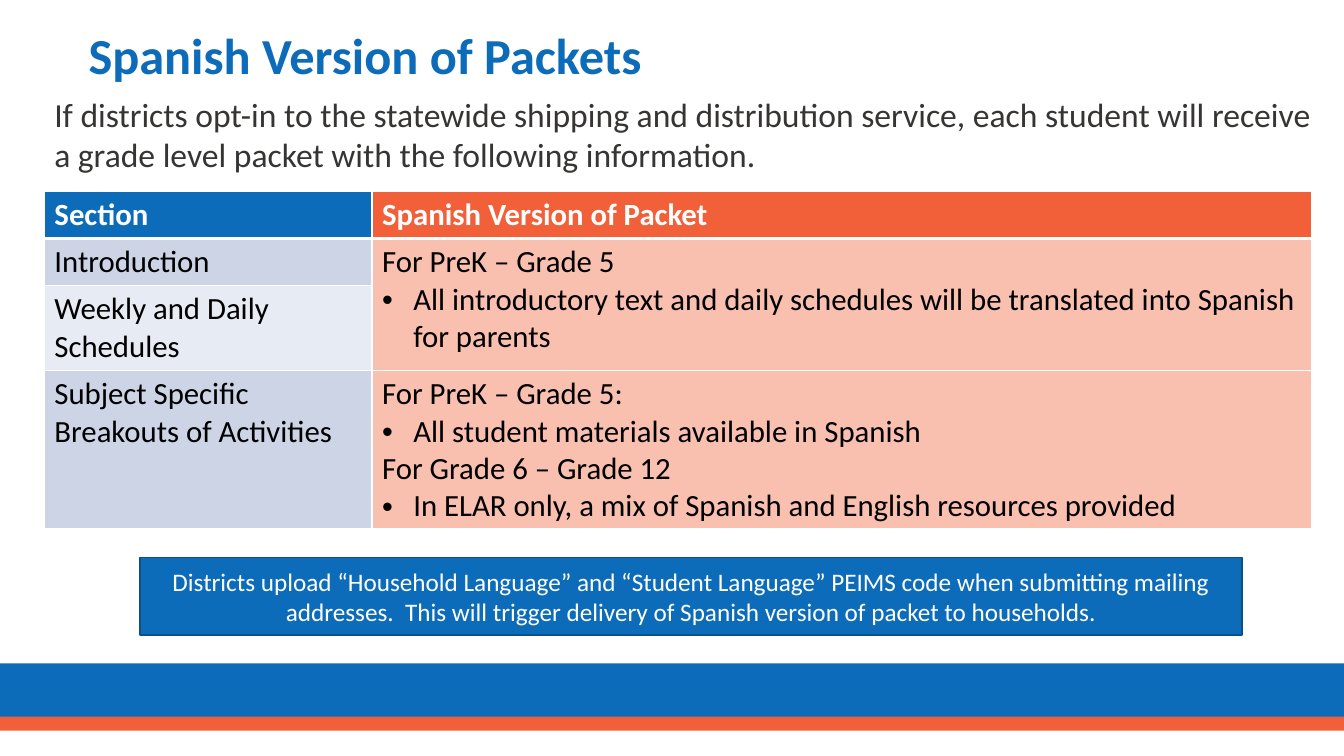
from lxml.etree import SubElement
from pptx import Presentation
from pptx.dml.color import RGBColor
from pptx.enum.shapes import MSO_SHAPE
from pptx.enum.text import MSO_ANCHOR, PP_ALIGN
from pptx.oxml import parse_xml
from pptx.oxml.ns import nsdecls, qn
from pptx.util import Inches, Pt

BLUE, ORANGE, WHITE, BLACK = "0D6CB9", "F16038", "FFFFFF", "000000"
PALE_BLUE, PALER_BLUE, PALE_ORANGE = "CCD4E6", "E7EBF3", "F9BFAF"


def color(value):
    return RGBColor.from_string(value)


def write(frame, lines, size, text_color, bold=False, align=None):
    """Fill a text frame; lines that start with a bullet sign become list items."""
    frame.word_wrap = True
    for index, line in enumerate(lines):
        para = frame.paragraphs[0] if index == 0 else frame.add_paragraph()
        para.text = line.removeprefix("• ")
        para.alignment = align
        if line.startswith("• "):
            properties = para._p.get_or_add_pPr()
            properties.set("marL", str(Inches(0.31)))
            properties.set("indent", str(-Inches(0.31)))
            SubElement(properties, qn("a:buFont")).set("typeface", "Arial")
            SubElement(properties, qn("a:buChar")).set("char", "•")
        para.font.name = "Calibri"
        para.font.size = Pt(size)
        para.font.bold = bold
        para.font.color.rgb = color(text_color)


deck = Presentation()
deck.slide_width, deck.slide_height = Inches(13.33), Inches(7.5)
page = deck.slides.add_slide(deck.slide_layouts[6])

# Footer bands and the note above them
rectangles = []
for left, top, width, height, fill in [
    (0, 6.58, 13.33, 0.58, BLUE),
    (0, 7.11, 13.33, 0.14, ORANGE),
    (1.39, 5.53, 10.93, 0.77, BLUE),
]:
    rectangle = page.shapes.add_shape(
        MSO_SHAPE.RECTANGLE, Inches(left), Inches(top), Inches(width), Inches(height))
    rectangle.shadow.inherit = False
    rectangle.fill.solid()
    rectangle.fill.fore_color.rgb = color(fill)
    rectangle.line.fill.background()
    rectangles.append(rectangle)

note = rectangles[-1]
note.line.color.rgb = color("0A5089")
note.line.width = Pt(1)
note.text_frame.vertical_anchor = MSO_ANCHOR.MIDDLE
write(note.text_frame, [
    "Districts upload “Household Language” and “Student Language” PEIMS code when "
    "submitting mailing addresses.  This will trigger delivery of Spanish version "
    "of packet to households."], 18, WHITE, align=PP_ALIGN.CENTER)

# Title
title = page.shapes.add_textbox(Inches(0.78), Inches(0.17), Inches(12.16), Inches(0.82))
title.text_frame.vertical_anchor = MSO_ANCHOR.MIDDLE
write(title.text_frame, ["Spanish Version of Packets"], 36, BLUE, bold=True)
title.text_frame.paragraphs[0].line_spacing = 0.9

# Introduction
intro = page.shapes.add_textbox(Inches(0.44), Inches(0.88), Inches(12.76), Inches(0.91))
write(intro.text_frame, [
    "If districts opt-in to the statewide shipping and distribution service, each "
    "student will receive a grade level packet with the following information."],
    24, "363534")

# Table of packet sections
rows = [
    (0.46, (["Section"], BLUE), (["Spanish Version of Packet"], ORANGE)),
    (0.46, (["Introduction"], PALE_BLUE), ([
        "For PreK – Grade 5",
        "• All introductory text and daily schedules will be translated into Spanish "
        "for parents"], PALE_ORANGE)),
    (0.84, (["Weekly and Daily Schedules"], PALER_BLUE), ([], PALE_ORANGE)),
    (1.57, (["Subject Specific Breakouts of Activities"], PALE_BLUE), ([
        "For PreK – Grade 5:",
        "• All student materials available in Spanish",
        "For Grade 6 – Grade 12",
        "• In ELAR only, a mix of Spanish and English resources provided"], PALE_ORANGE)),
]
table = page.shapes.add_table(
    len(rows), 2, Inches(0.44), Inches(1.9), Inches(12.57), Inches(3.33)).table
table.columns[0].width, table.columns[1].width = Inches(3.25), Inches(9.32)
table.cell(1, 1).merge(table.cell(2, 1))

for row_index, (height, *contents) in enumerate(rows):
    table.rows[row_index].height = Inches(height)
    header = row_index == 0
    for column_index, (lines, fill) in enumerate(contents):
        cell = table.cell(row_index, column_index)
        cell.fill.solid()
        cell.fill.fore_color.rgb = color(fill)
        write(cell.text_frame, lines, 22, WHITE if header else BLACK, bold=header)

        # White borders, thicker around the header's lower edge
        thick_edge = {0: "lnB", 1: "lnT"}.get(row_index)
        for position, edge in enumerate(["lnL", "lnR", "lnT", "lnB"]):
            width = Pt(3 if edge == thick_edge else 1)
            cell._tc.get_or_add_tcPr().insert(position, parse_xml(
                f'<a:{edge} {nsdecls("a")} w="{width}"><a:solidFill>'
                f'<a:srgbClr val="{WHITE}"/></a:solidFill></a:{edge}>'))

deck.save("out.pptx")
